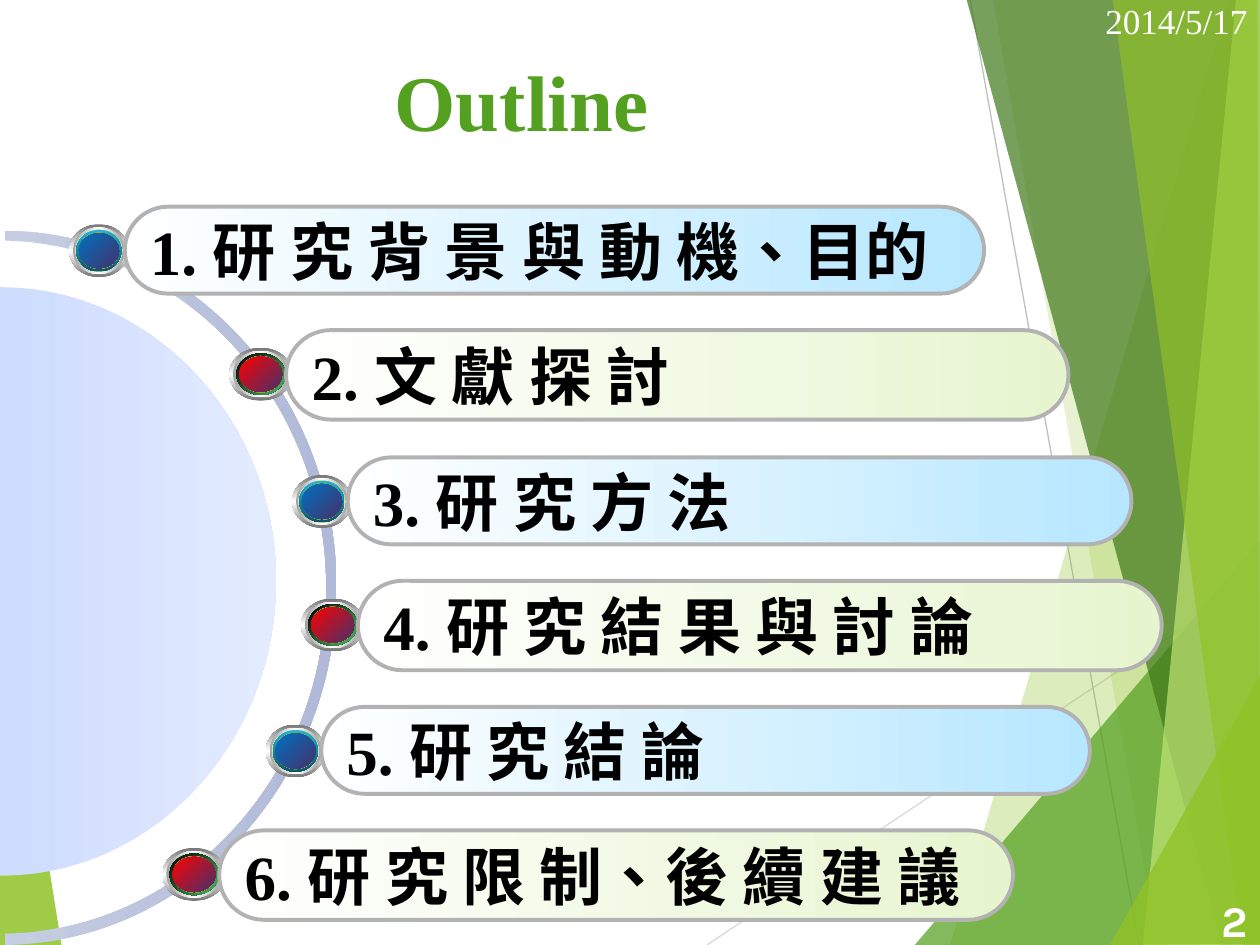
import pptx
import pptx.util
import pptx.dml.color
import pptx.enum.shapes
import pptx.enum.text
import pptx.oxml.ns
from lxml import etree

Inches = pptx.util.Inches
qn = pptx.oxml.ns.qn
KIND = pptx.enum.shapes.MSO_SHAPE
ALIGN = pptx.enum.text.PP_ALIGN
MIDDLE = pptx.enum.text.MSO_ANCHOR.MIDDLE

HUES = {
    "lime": "90C226", "green": "54A021", "forest": "3F7819", "pale": "C0E474",
    "silver": "D9D9D9", "gray": "BFBFBF", "edge": "B2B2B2",
    "black": "000000", "white": "FFFFFF",
}
SERIF, SANS, ROUND = "Times New Roman", "Noto Sans CJK SC", "Karla"

TITLE = "Outline"
DATE = "2014/5/17"
PAGE = "2"
ITEMS = [
    ("研 究 背 景 與 動 機、目的", 0.99, 1.64, 6.82),
    ("文 獻 探 討", 2.27, 2.62, 6.21),
    ("研 究 方 法", 2.76, 3.63, 6.22),
    ("研 究 結 果 與 討 論", 2.84, 4.61, 6.38),
    ("研 究 結 論", 2.55, 5.61, 6.1),
    ("研 究 限 制、後 續 建 議", 1.74, 6.59, 6.3),
]

CORNER = ("lime", 85, [(-0.01, 4.39), (0.49, 7.51), (-0.01, 7.5)])
RAYS = [
    ("silver", (5.61, 7.5), (10.01, 4.57)),
    ("gray", (7.7, 0), (9.04, 7.5)),
]
FACETS = [
    ("lime", 30, [(9.75, 0), (7.54, 7.5), (10.02, 7.51), (10.01, 0.01)]),
    ("lime", 20, [(7.88, -0.01), (9.19, 7.5), (10.01, 7.5), (10.01, -0.01)]),
    ("green", 72, [(7.26, 7.5), (10, 4.29), (10.01, 7.5)]),
    ("forest", 70, [(7.67, -0.01), (9.7, 7.5), (10.01, 7.49), (10.01, -0.01)]),
    ("pale", 70, [(9.81, -0.01), (9.07, 7.5), (10.01, 7.5), (10, -0.01)]),
    ("lime", 65, [(8.83, -0.01), (9.86, 7.5), (10, 7.5), (9.98, -0.01)]),
    ("lime", 80, [(8.81, 7.5), (10.01, 5.35), (10.01, 7.49)]),
]
RING = [(0.04, 1.91), (1.45, 1.94, 2.59, 3.16, 2.59, 4.66),
        (2.59, 6.17, 1.45, 7.39, 0.04, 7.41), (0.04, 7.5),
        (1.5, 7.48, 2.67, 6.21, 2.67, 4.66), (2.67, 3.12, 1.5, 1.85, 0.04, 1.83)]
DISK = [(0, 2.28), (1.21, 2.28, 2.19, 3.33, 2.19, 4.61),
        (2.19, 5.9, 1.21, 6.95, 0, 6.95)]

RIM = [(0, "767676"), (50, "FFFFFF"), (100, "767676")]
BEVEL = [(0, "A2A2A2"), (50, "FFFFFF"), (100, "A2A2A2")]
GLINT = [(0, "FFFFFF"), (50, "99CA3C"), (100, "FFFFFF")]
BAND = [(0, "759B2E"), (50, "99CA3C"), (100, "759B2E")]
RUBY = [(0, "FF0000"), (16, "E00812"), (25, "D10C1B"), (42, "B1152E"),
        (56, "971C3D"), (72, "7A244E"), (82, "672959"), (100, "45326D")]
TALL = (0.42, 0.37, 0.33, 0.33, 0.29, 0.28)
STYLES = [
    {"wide": (0.47, 0.41, 0.37, 0.36, 0.32, 0.32), "high": 0.69, "tint": "B7E7FF",
     "back": 0.44,
     "shell": ([(0, "21B3E1"), (100, "0F5368")], 90),
     "core": ([(0, "0070C0"), (100, "45326D")], 45)},
    {"wide": (0.5, 0.44, 0.39, 0.39, 0.34, 0.34), "high": 0.71, "tint": "E7F5CF",
     "back": 0.45,
     "shell": ([(0, "000000"), (100, "48BE67")], 45),
     "core": (RUBY, 45)},
]


def tone(name):
    return pptx.dml.color.RGBColor.from_string(HUES[name])


def blend(shape, stops, turn):
    shape.fill.gradient()
    grad = shape._element.spPr.find(qn("a:gradFill"))
    grad.find(qn("a:lin")).set("ang", str(turn * 60000))
    stack = grad.find(qn("a:gsLst"))
    for old in list(stack):
        stack.remove(old)
    for pos, hue in stops:
        stop = etree.SubElement(stack, qn("a:gs"), pos=str(pos * 1000))
        etree.SubElement(stop, qn("a:srgbClr"), val=hue)


def bare(shape):
    shape.shadow.inherit = False
    shape.line.fill.background()
    return shape


def trace(shapes, steps):
    spots = [(Inches(step[-2]), Inches(step[-1])) for step in steps]
    pen = shapes.build_freeform(*spots[0], scale=1.0)
    pen.add_line_segments(spots[1:], close=True)
    shape = bare(pen.convert_to_shape())
    edges = list(shape._element.iter(qn("a:lnTo")))
    for edge, step in zip(edges, steps[1:]):
        if len(step) == 6:
            edge.tag = qn("a:cubicBezTo")
            for spot, i in enumerate((0, 2)):
                knob = etree.Element(qn("a:pt"), x=str(Inches(step[i]) - shape.left),
                                     y=str(Inches(step[i + 1]) - shape.top))
                edge.insert(spot, knob)
    return shape


def facet(shapes, hue, alpha, points):
    shape = trace(shapes, points)
    shape.fill.solid()
    shape.fill.fore_color.rgb = tone(hue)
    mark = shape._element.spPr.find(qn("a:solidFill"))[0]
    etree.SubElement(mark, qn("a:alpha"), val=str(alpha * 1000))


def ray(shapes, hue, start, end):
    line = shapes.add_connector(pptx.enum.shapes.MSO_CONNECTOR.STRAIGHT,
                                *map(Inches, start + end))
    line.line.color.rgb = tone(hue)
    line.line.width = pptx.util.Pt(0.75)
    etree.SubElement(line._element.spPr, qn("a:effectLst"))


def write(para, text, face, size, hue, bold=True):
    run = para.add_run()
    run.text = text
    look = {"name": face, "size": pptx.util.Pt(size), "bold": bold}
    for key, value in look.items():
        setattr(run.font, key, value)
    run.font.color.rgb = tone(hue)
    if face == SANS:
        marks = run._r.get_or_add_rPr()
        marks.set("lang", "zh-TW")
        marks.set("altLang", "en-US")
        etree.SubElement(marks, qn("a:ea"), typeface=face)


def setup(shape, align, wrap=True):
    frame = shape.text_frame
    form = {"vertical_anchor": MIDDLE, "word_wrap": wrap,
            "auto_size": pptx.enum.text.MSO_AUTO_SIZE.NONE}
    for key, value in form.items():
        setattr(frame, key, value)
    para = frame.paragraphs[0]
    para.alignment = align
    return para


def entry(shapes, rank, text, left, top, wide):
    style = STYLES[rank % 2]
    group = shapes.add_group_shape().shapes
    x = left - style["back"] + style["wide"][0] / 2
    y = top + 0.14 + TALL[0] / 2
    coats = [(RIM, 90), (BEVEL, 0), (GLINT, 45), style["shell"], (BAND, 315), style["core"]]
    for (stops, turn), w, h in zip(coats, style["wide"], TALL):
        ball = group.add_shape(KIND.OVAL, *map(Inches, (x - w / 2, y - h / 2, w, h)))
        blend(bare(ball), stops, turn)
    bar = group.add_shape(KIND.ROUNDED_RECTANGLE,
                          *map(Inches, (left, top, wide, style["high"])))
    bar.adjustments[0] = 0.5
    bar.shadow.inherit = False
    blend(bar, [(0, HUES["white"]), (100, style["tint"])], 0)
    bar.line.color.rgb = tone("edge")
    bar.line.width = pptx.util.Pt(2.25)
    para = setup(bar, ALIGN.LEFT, False)
    write(para, f"{rank + 1}. ", SERIF, 36, "black")
    write(para, text, SANS, 36, "black")


def label(shapes, box, *look):
    note = shapes.add_textbox(*map(Inches, box))
    write(setup(note, ALIGN.RIGHT), *look)


def main():
    deck = pptx.Presentation()
    deck.slide_width, deck.slide_height = Inches(10), Inches(7.5)
    slide = deck.slides.add_slide(deck.slide_layouts[5])
    shapes = slide.shapes
    head = shapes.title
    place = {"left": 0.67, "top": 0.36, "width": 6.94, "height": 0.86}
    for key, value in place.items():
        setattr(head, key, Inches(value))
    write(setup(head, ALIGN.CENTER), TITLE, SERIF, 45, "green")

    facet(shapes, *CORNER)
    for item in RAYS:
        ray(shapes, *item)
    for item in FACETS:
        facet(shapes, *item)
    blend(trace(shapes, RING), [(0, "C5CDE2"), (100, "B0BAD8")], 0)
    blend(trace(shapes, DISK), [(0, "CEDCFE"), (100, "E3EBFF")], 0)

    for rank, item in enumerate(ITEMS):
        entry(shapes, rank, *item)
    label(shapes, (9.25, 7.1, 0.75, 0.4), PAGE, ROUND, 25, "white")
    label(shapes, (8.67, -0.04, 1.33, 0.4), DATE, SERIF, 20, "white", False)
    deck.save("out.pptx")


if __name__ == "__main__":
    main()
